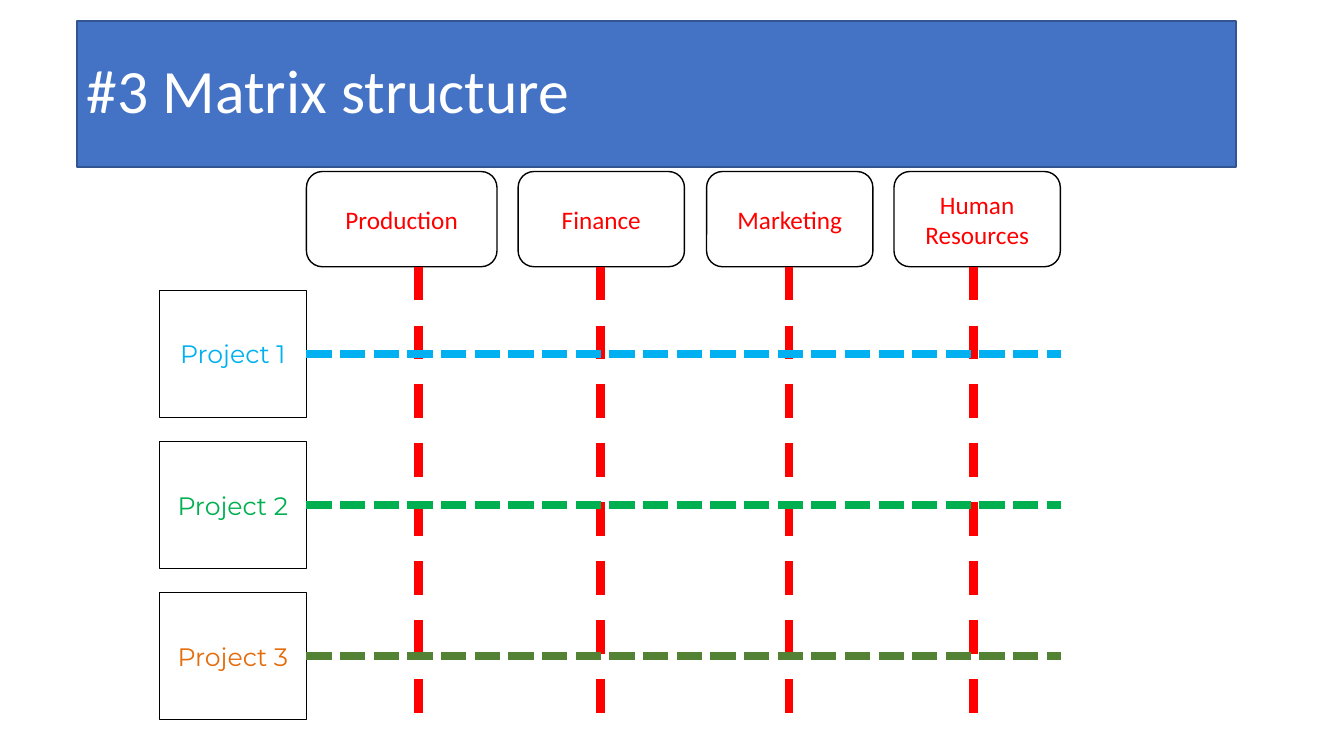
from lxml.etree import SubElement
from pptx import Presentation
from pptx.dml.color import RGBColor
from pptx.enum.dml import MSO_LINE
from pptx.enum.shapes import MSO_CONNECTOR, MSO_SHAPE
from pptx.enum.text import MSO_ANCHOR, MSO_AUTO_SIZE, PP_ALIGN
from pptx.oxml.ns import qn
from pptx.util import Pt

WHITE = RGBColor(0xFF, 0xFF, 0xFF)
BLACK = RGBColor(0x00, 0x00, 0x00)
BANNER = RGBColor(0x44, 0x72, 0xC4)
BANNER_EDGE = RGBColor(0x32, 0x54, 0x91)
RED = RGBColor(0xFF, 0x00, 0x00)
SKY = RGBColor(0x00, 0xB0, 0xF0)
GREEN = RGBColor(0x00, 0xB0, 0x50)
ORANGE = RGBColor(0xE4, 0x6C, 0x0A)
OLIVE = RGBColor(0x54, 0x82, 0x35)

DEPARTMENTS = [
    ("Production", 218.9, 136.1, 298.8),
    ("Finance", 370.1, 118.8, 429.1),
    ("Marketing", 504.7, 118.8, 563.8),
    ("Human Resources", 638.6, 118.8, 695.5),
]
PROJECTS = [("Project 1", SKY, SKY), ("Project 2", GREEN, GREEN), ("Project 3", ORANGE, OLIVE)]
DEPARTMENT_TOP, DEPARTMENT_HEIGHT = 122.5, 68
PROJECT_LEFT, PROJECT_TOP, PROJECT_WIDTH, PROJECT_HEIGHT = 113.8, 207.4, 105.1, 90.7
PROJECT_STEP = 108
GRID_RIGHT = 758


def write(box, text, *, size, font, color, align=PP_ALIGN.CENTER, spacing=1.0):
    frame = box.text_frame
    frame.word_wrap = True
    frame.auto_size = MSO_AUTO_SIZE.NONE
    frame.vertical_anchor = MSO_ANCHOR.MIDDLE
    para = frame.paragraphs[0]
    para.alignment = align
    para.line_spacing = spacing
    span = para.add_run()
    span.text = text
    span.font.size = Pt(size)
    span.font.name = font
    span.font.color.rgb = color


class MatrixPage:
    heading_font = "Calibri"
    project_font = "Montserrat"
    edge_width = 1
    link_width = 6

    def __init__(self, deck):
        self.page = deck.slides.add_slide(deck.slide_layouts[5])

    def outline(self, box, color):
        box.line.color.rgb = color
        box.line.width = Pt(self.edge_width)

    def title(self, text, left, top, width, height):
        box = self.page.shapes.title
        box.left, box.top, box.width, box.height = map(Pt, (left, top, width, height))
        box.fill.solid()
        box.fill.fore_color.rgb = BANNER
        self.outline(box, BANNER_EDGE)
        write(box, text, size=44, font=self.heading_font, color=WHITE,
              align=PP_ALIGN.LEFT, spacing=0.9)

    def box(self, kind, text, left, top, width, height, font, color):
        box = self.page.shapes.add_shape(kind, *map(Pt, (left, top, width, height)))
        box.shadow.inherit = False
        box.fill.background()
        self.outline(box, BLACK)
        write(box, text, size=18, font=font, color=color)

    def link(self, start_x, start_y, end_x, end_y, color, dash):
        line = self.page.shapes.add_connector(
            MSO_CONNECTOR.STRAIGHT, *map(Pt, (start_x, start_y, end_x, end_y)))
        line.line.color.rgb = color
        line.line.width = Pt(self.link_width)
        line.line.dash_style = dash
        SubElement(line._element.spPr, qn("a:effectLst"))


def main():
    deck = Presentation()
    deck.slide_width, deck.slide_height = Pt(960), Pt(540)
    matrix = MatrixPage(deck)
    matrix.title("#3 Matrix structure", 54.9, 14.9, 828, 104.4)

    for name, left, width, _ in DEPARTMENTS:
        matrix.box(MSO_SHAPE.ROUNDED_RECTANGLE, name, left, DEPARTMENT_TOP, width,
                   DEPARTMENT_HEIGHT, matrix.heading_font, RED)
    tops = [PROJECT_TOP + PROJECT_STEP * row for row in range(len(PROJECTS))]
    for top, (name, color, _) in zip(tops, PROJECTS):
        matrix.box(MSO_SHAPE.RECTANGLE, name, PROJECT_LEFT, top, PROJECT_WIDTH,
                   PROJECT_HEIGHT, matrix.project_font, color)

    grid_top = DEPARTMENT_TOP + DEPARTMENT_HEIGHT
    grid_bottom = tops[-1] + PROJECT_HEIGHT
    for _, _, _, x in DEPARTMENTS:
        matrix.link(x, grid_top, x, grid_bottom, RED, MSO_LINE.DASH)
    for top, (_, _, color) in zip(tops, PROJECTS):
        y = top + PROJECT_HEIGHT / 2
        matrix.link(PROJECT_LEFT + PROJECT_WIDTH, y, GRID_RIGHT, y, color, MSO_LINE.SQUARE_DOT)

    deck.save("out.pptx")


if __name__ == "__main__":
    main()
